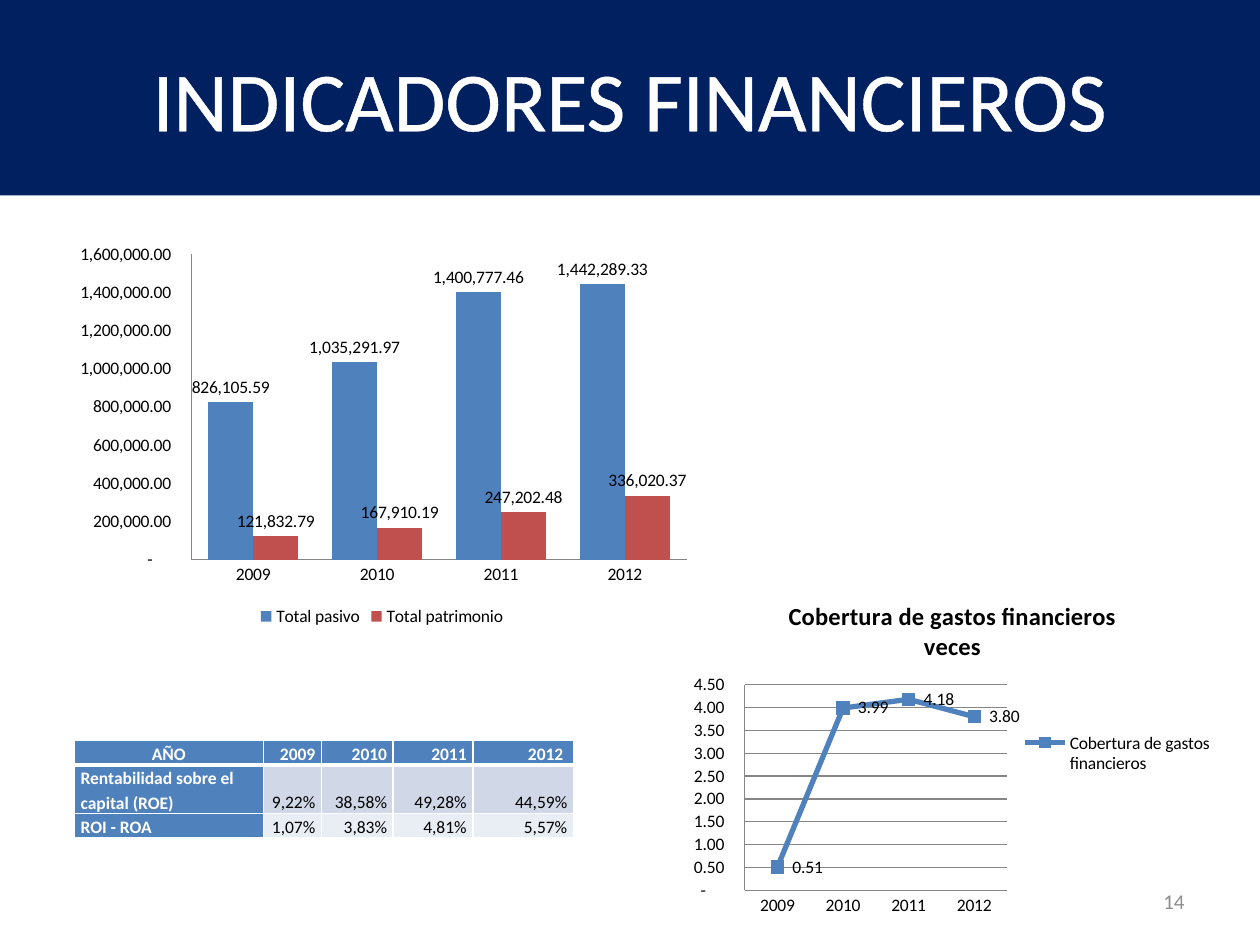
"""Build the slide of financial indicators with two charts and a table of returns."""
import lxml.etree
import pptx
import pptx.chart.data
import pptx.dml.color
import pptx.enum.chart
import pptx.enum.shapes
import pptx.enum.text
import pptx.oxml
import pptx.oxml.ns
import pptx.util
from dataclasses import dataclass

Pt = pptx.util.Pt
qn = pptx.oxml.ns.qn
Align = pptx.enum.text.PP_ALIGN
Anchor = pptx.enum.text.MSO_ANCHOR
Kind = pptx.enum.chart.XL_CHART_TYPE
Legend = pptx.enum.chart.XL_LEGEND_POSITION
Label = pptx.enum.chart.XL_LABEL_POSITION
Tick = pptx.enum.chart.XL_TICK_MARK


@dataclass(frozen=True)
class Theme:
    font: str = "Calibri"
    navy: str = "002060"
    blue: str = "4F81BD"
    red: str = "C0504D"
    band_dark: str = "D0D8E8"
    band_light: str = "E9EDF4"
    white: str = "FFFFFF"
    black: str = "000000"
    grey: str = "8C8C8C"
    axis: str = "868686"
    heading: int = 48
    chart_title: int = 14
    number: int = 12
    body: int = 10


theme = Theme()
rgb = pptx.dml.color.RGBColor.from_string
ACCOUNTING = r'_-* #,##0.00\ _€_-;\-* #,##0.00\ _€_-;_-* "-"??\ _€_-;_-@_-'
YEARS = ["2009", "2010", "2011", "2012"]


def style_font(font, size, color, bold=False):
    for name, value in {"name": theme.font, "size": Pt(size), "bold": bold}.items():
        setattr(font, name, value)
    font.color.rgb = rgb(color)


def write(frame, text, size, color, align, bold=False, spacing=1.0):
    para = frame.paragraphs[0]
    para.alignment = align
    para.line_spacing = spacing
    span = para.add_run()
    span.text = text
    style_font(span.font, size, color, bold)
    return span


deck = pptx.Presentation()
deck.slide_width, deck.slide_height = Pt(720), Pt(540)
page = deck.slides.add_slide(deck.slide_layouts[6])

banner = page.shapes.add_shape(pptx.enum.shapes.MSO_SHAPE.RECTANGLE, 0, 0, Pt(720), Pt(111.6))
banner.shadow.inherit = False
banner.fill.solid()
banner.fill.fore_color.rgb = rgb(theme.navy)
banner.line.fill.background()
banner.text_frame.word_wrap = True
banner.text_frame.vertical_anchor = Anchor.MIDDLE
heading = write(banner.text_frame, "INDICADORES FINANCIEROS", theme.heading, theme.white, Align.CENTER)
outline = pptx.oxml.parse_xml(
    '<a:ln xmlns:a="http://schemas.openxmlformats.org/drawingml/2006/main" w="18415">'
    f'<a:solidFill><a:srgbClr val="{theme.white}"/></a:solidFill></a:ln>')
heading.font._element.insert(0, outline)

box = page.shapes.add_textbox(Pt(516), Pt(500.5), Pt(168), Pt(28.75))
box.text_frame.word_wrap = True
box.text_frame.vertical_anchor = Anchor.MIDDLE
write(box.text_frame, "14", theme.number, theme.grey, Align.RIGHT)

charts = [
    {"kind": Kind.LINE_MARKERS, "at": (388, 332.5, 312.5, 196), "plot": (0.12, 0.3, 0.48, 0.6),
     "title": ["Cobertura de gastos financieros", "veces"], "legend": Legend.RIGHT,
     "top": 4.5, "step": 0.5, "label": Label.RIGHT, "format": ACCOUNTING,
     "series": [("Cobertura de gastos financieros", [0.51, 3.99, 4.18, 3.8], theme.blue)]},
    {"kind": Kind.COLUMN_CLUSTERED, "at": (36.75, 134, 363, 226.75), "plot": (0.2, 0.05, 0.78, 0.77),
     "title": [], "legend": Legend.BOTTOM,
     "top": 1600000, "step": 200000, "label": Label.OUTSIDE_END, "format": "#,##0.00",
     "series": [("Total pasivo", [826105.59, 1035291.97, 1400777.46, 1442289.33], theme.blue),
                ("Total patrimonio", [121832.79, 167910.19, 247202.48, 336020.37], theme.red)]},
]
for item in charts:
    is_line = item["kind"] == Kind.LINE_MARKERS
    data = pptx.chart.data.CategoryChartData(number_format="#,##0.00")
    data.categories = YEARS
    for name, values, color in item["series"]:
        data.add_series(name, values)
    chart = page.shapes.add_chart(item["kind"], *map(Pt, item["at"]), data).chart
    style_font(chart.font, theme.body, theme.black)

    chart.has_title = bool(item["title"])
    for index, text in enumerate(item["title"]):
        frame = chart.chart_title.text_frame
        para = frame.add_paragraph() if index else frame.paragraphs[0]
        span = para.add_run()
        span.text = text
        style_font(span.font, theme.chart_title, theme.black, True)

    chart.has_legend = True
    chart.legend.position = item["legend"]
    chart.legend.include_in_layout = False

    for axis in (chart.category_axis, chart.value_axis):
        axis.major_tick_mark = axis.minor_tick_mark = Tick.NONE
        axis.format.line.color.rgb = rgb(theme.axis)
    scale = {"minimum_scale": 0, "maximum_scale": item["top"], "major_unit": item["step"],
             "has_major_gridlines": is_line}
    for name, value in scale.items():
        setattr(chart.value_axis, name, value)
    chart.value_axis.tick_labels.number_format = ACCOUNTING
    chart.value_axis.tick_labels.number_format_is_linked = False
    if is_line:
        chart.value_axis.major_gridlines.format.line.color.rgb = rgb(theme.axis)

    plot = chart.plots[0]
    plot.vary_by_categories = False
    if not is_line:
        plot.gap_width = 75
        plot.overlap = 0
    for series, (name, values, color) in zip(plot.series, item["series"]):
        fills = [series.format.fill]
        if is_line:
            series.smooth = False
            series.format.line.width = Pt(3)
            series.format.line.color.rgb = rgb(color)
            series.marker.style = pptx.enum.chart.XL_MARKER_STYLE.SQUARE
            series.marker.size = 7
            series.marker.format.line.color.rgb = rgb(color)
            fills = [series.marker.format.fill]
        for fill in fills:
            fill.solid()
            fill.fore_color.rgb = rgb(color)
        labels = series.data_labels
        for key, value in {"show_value": True, "position": item["label"],
                           "number_format": item["format"], "number_format_is_linked": False}.items():
            setattr(labels, key, value)
        style_font(labels.font, theme.body, theme.black)

    area = chart._chartSpace.find(".//" + qn("c:plotArea"))
    for old in area.findall(qn("c:layout")):
        area.remove(old)
    layout = lxml.etree.Element(qn("c:layout"))
    manual = lxml.etree.SubElement(layout, qn("c:manualLayout"))
    places = [("layoutTarget", "inner"), ("xMode", "edge"), ("yMode", "edge"),
              *zip("xywh", item["plot"])]
    for tag, value in places:
        lxml.etree.SubElement(manual, qn("c:" + tag)).set("val", str(value))
    area.insert(0, layout)

rows = [["AÑO", "2009", "2010", "2011", "2012 "],
        ["Rentabilidad sobre el capital (ROE)", "9,22%", "38,58%", "49,28%", "44,59%"],
        ["ROI - ROA", "1,07%", "3,83%", "4,81%", "5,57%"]]
widths = [108, 33.25, 41, 45.5, 57.5]
table = page.shapes.add_table(3, 5, Pt(42.5), Pt(423.25), Pt(sum(widths)), Pt(55.5)).table
for column, width in zip(table.columns, widths):
    column.width = Pt(width)
for row, height in zip(table.rows, [14, 27.5, 14]):
    row.height = Pt(height)
for r, texts in enumerate(rows):
    for c, text in enumerate(texts):
        cell = table.cell(r, c)
        is_header = r == 0 or c == 0
        for name, value in {"margin_left": Pt(3.6), "margin_right": Pt(3.6), "margin_top": 0,
                            "margin_bottom": 0, "vertical_anchor": Anchor.BOTTOM}.items():
            setattr(cell, name, value)
        align = Align.RIGHT if c else Align.LEFT if r else Align.CENTER
        write(cell.text_frame, text, theme.body, theme.white if is_header else theme.black,
              align, is_header, 1.15)
        borders = {"L": 1, "R": 1, "T": 3 if r == 1 else 1, "B": 1 if r else 3}
        for side, weight in borders.items():
            edge = lxml.etree.SubElement(cell._tc.get_or_add_tcPr(), qn("a:ln" + side), w=str(Pt(weight)))
            paint = lxml.etree.SubElement(edge, qn("a:solidFill"))
            lxml.etree.SubElement(paint, qn("a:srgbClr"), val=theme.white)
        cell.fill.solid()
        cell.fill.fore_color.rgb = rgb(theme.blue if is_header else (theme.band_light, theme.band_dark)[r % 2])

deck.save("out.pptx")
